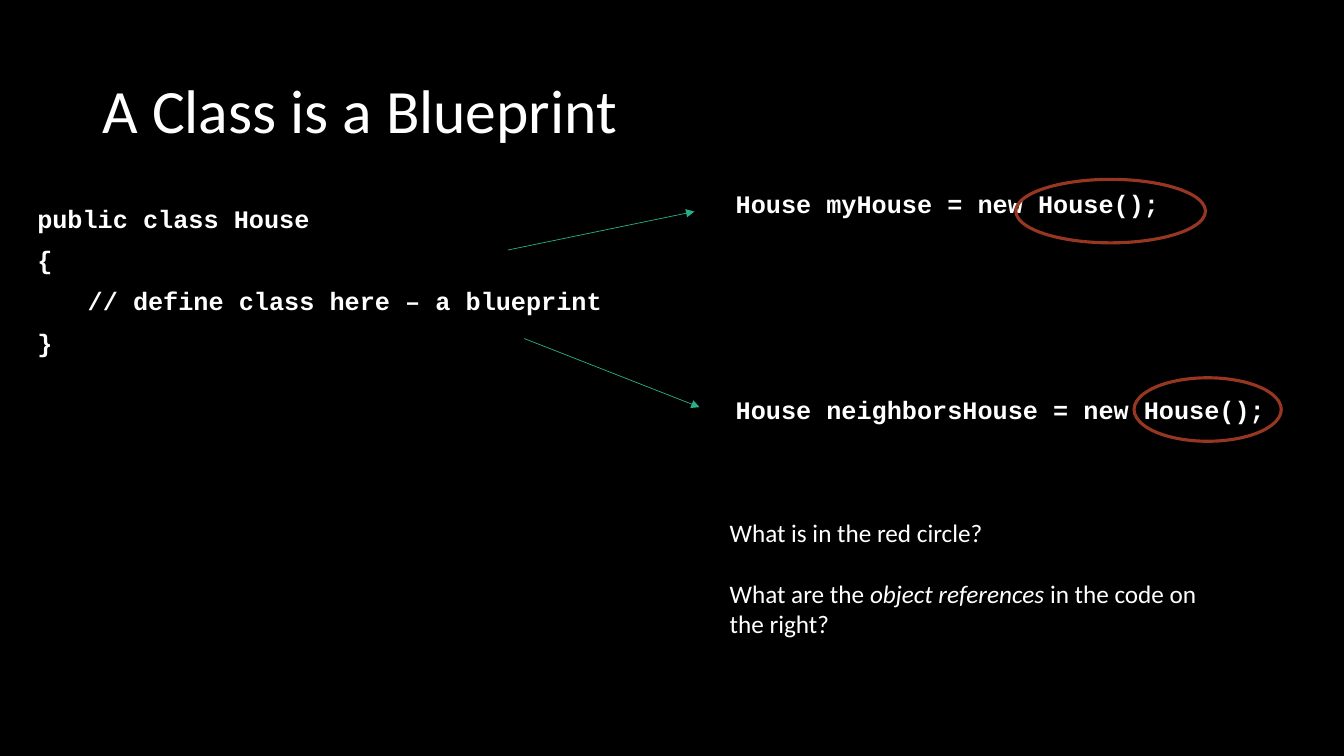
import pptx
import pptx.util
import pptx.dml.color
import pptx.enum.shapes
import pptx.enum.text
import pptx.oxml.ns
import lxml.etree

Cm = pptx.util.Cm
Pt = pptx.util.Pt

COLOURS = {"background": "000000", "text": "FFFFFF", "arrow": "29AF8C", "circle": "973721"}
BODY_FONT = "Calibri"
CODE_FONT = "Courier New"


def colour(name):
    return pptx.dml.color.RGBColor.from_string(COLOURS[name])


class BlueprintSlide:
    def __init__(self, deck):
        self.slide = deck.slides.add_slide(deck.slide_layouts[5])
        fill = self.slide.background.fill
        fill.solid()
        fill.fore_color.rgb = colour("background")

    def add_run(self, para, text, font_name, size, bold=False, italic=False):
        run = para.add_run()
        run.text = text
        run.font.name = font_name
        run.font.size = Pt(size)
        run.font.bold = bold
        run.font.italic = italic
        run.font.color.rgb = colour("text")

    def title(self, text, left, top, width, height):
        box = self.slide.shapes.title
        box.left, box.top, box.width, box.height = Cm(left), Cm(top), Cm(width), Cm(height)
        frame = box.text_frame
        frame.vertical_anchor = pptx.enum.text.MSO_ANCHOR.MIDDLE
        para = frame.paragraphs[0]
        para.alignment = pptx.enum.text.PP_ALIGN.LEFT
        para.line_spacing = 0.9
        self.add_run(para, text, BODY_FONT, 44)

    def text(self, paragraphs, left, top, width, height, gap, line_spacing=1.0,
             font_name=BODY_FONT, bold=False):
        """Add a box; each paragraph is a list of (text, italic) pieces, gap points apart."""
        box = self.slide.shapes.add_textbox(Cm(left), Cm(top), Cm(width), Cm(height))
        frame = box.text_frame
        frame.word_wrap = True
        for index, pieces in enumerate(paragraphs):
            para = frame.add_paragraph() if index else frame.paragraphs[0]
            para.line_spacing = line_spacing
            para.space_before = Pt(gap if index else 0)
            for text, italic in pieces:
                self.add_run(para, text, font_name, 18, bold, italic)

    def code(self, lines, left, top, width, height, gap):
        self.text([[(line, False)] for line in lines], left, top, width, height,
                  gap, 0.9, CODE_FONT, True)

    def arrow(self, start_x, start_y, end_x, end_y):
        line = self.slide.shapes.add_connector(
            pptx.enum.shapes.MSO_CONNECTOR.STRAIGHT,
            Cm(start_x), Cm(start_y), Cm(end_x), Cm(end_y))
        line.line.color.rgb = colour("arrow")
        line.line.width = Pt(0.5)
        qn = pptx.oxml.ns.qn
        properties = line.line._get_or_add_ln()
        lxml.etree.SubElement(properties, qn("a:tailEnd")).set("type", "triangle")
        lxml.etree.SubElement(properties.getparent(), qn("a:effectLst"))

    def circle(self, left, top, width, height):
        shape = self.slide.shapes.add_shape(
            pptx.enum.shapes.MSO_SHAPE.OVAL, Cm(left), Cm(top), Cm(width), Cm(height))
        shape.shadow.inherit = False
        shape.fill.background()
        shape.line.color.rgb = colour("circle")
        shape.line.width = Pt(2.25)


def main():
    deck = pptx.Presentation()
    deck.slide_width, deck.slide_height = Cm(33.87), Cm(19.05)
    page = BlueprintSlide(deck)

    page.title("A Class is a Blueprint", 2.33, 1.01, 29.21, 3.68)
    page.code(["public class House", "{", "\t// define class here – a blueprint", "}"],
              0.69, 5.08, 16.18, 12.09, gap=10)
    page.code(["House myHouse = new House();", "House neighborsHouse = new House();"],
              18.29, 4.7, 14.71, 12.09, gap=128)

    page.arrow(12.8, 6.3, 17.5, 5.33)
    page.arrow(13.21, 8.53, 17.63, 10.26)
    page.circle(25.6, 4.52, 4.78, 1.6)
    page.circle(28.58, 9.52, 3.71, 1.6)

    page.text([
        [("What is in the red circle?", False)],
        [("What are the ", False), ("object references ", True),
         ("in the code on the right?", False)],
    ], 18.14, 12.9, 12.27, 3.33, gap=22)

    deck.save("out.pptx")


if __name__ == "__main__":
    main()
